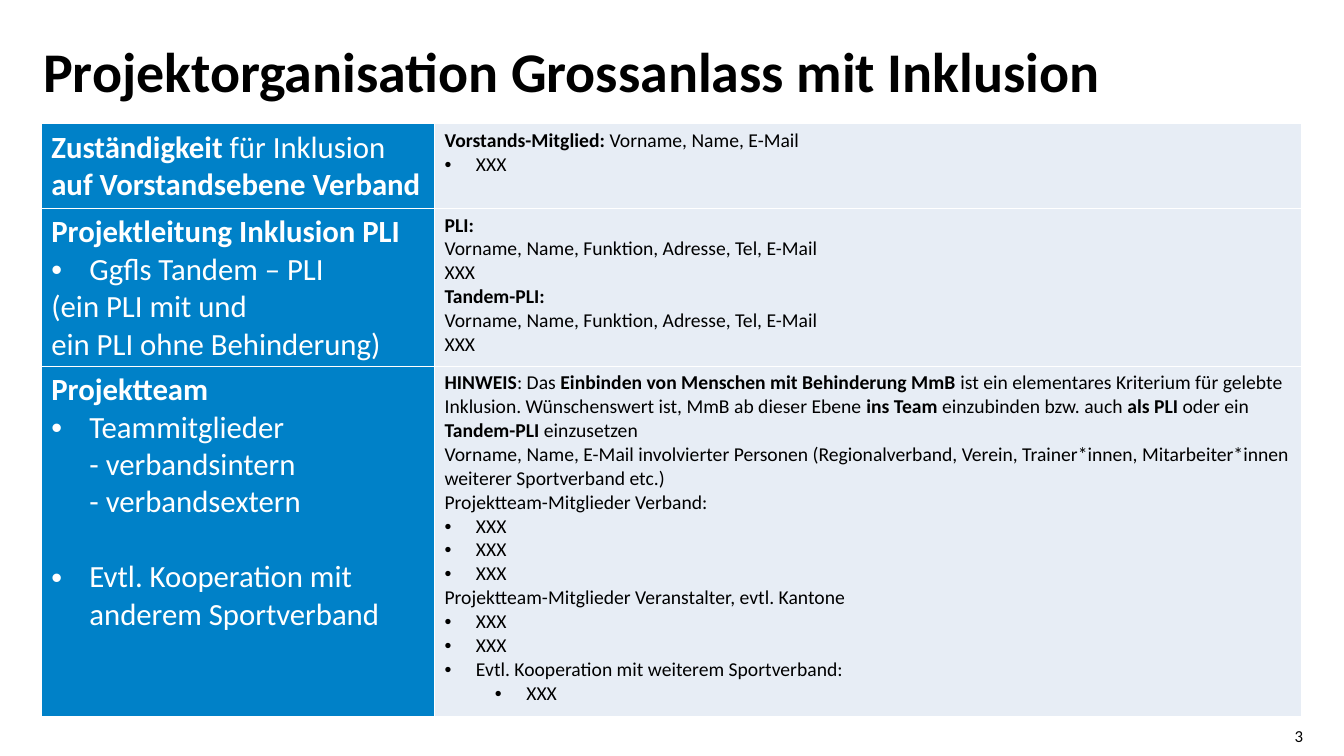
from dataclasses import dataclass

from lxml import etree
from pptx import Presentation
from pptx.dml.color import RGBColor
from pptx.enum.text import MSO_ANCHOR, PP_ALIGN
from pptx.oxml.ns import qn
from pptx.util import Cm, Pt

LEFT, RIGHT = PP_ALIGN.LEFT, PP_ALIGN.RIGHT
TOP, MIDDLE = MSO_ANCHOR.TOP, MSO_ANCHOR.MIDDLE


@dataclass(frozen=True)
class Theme:
    font: str = "Calibri"
    black: str = "000000"
    white: str = "FFFFFF"
    blue: str = "0081C8"
    pale: str = "E7EDF5"
    title: int = 40
    heading: int = 22
    body: int = 14
    number: int = 12
    border: int = 1


@dataclass(frozen=True)
class Item:
    text: str
    indent: float = 0
    hanging: float = 0
    level: int = 0
    before: float = 0


def topic(text, before=0):
    return Item(text, 0.96, 0.96, before=before)


def entry(text):
    return Item(text, 0.79, 0.79)


CONTACT = "Vorname, Name, Funktion, Adresse, Tel, E-Mail"
PLACEHOLDER = "XXX"

ROLES = [
    (
        [Item("**Zuständigkeit **für Inklusion **auf Vorstandsebene Verband**")],
        [Item("**Vorstands-Mitglied: **Vorname, Name, E-Mail"), entry(PLACEHOLDER)],
    ),
    (
        [
            Item("**Projektleitung Inklusion PLI**"),
            topic("Ggfls Tandem – PLI"),
            Item("(ein PLI mit und\nein PLI ohne Behinderung)"),
        ],
        [
            Item(text)
            for lead in ("PLI:", "Tandem-PLI:")
            for text in (f"**{lead}**", CONTACT, PLACEHOLDER)
        ],
    ),
    (
        [
            Item("**Projektteam**"),
            topic("Teammitglieder\n- verbandsintern\n- verbandsextern"),
            topic("Evtl. Kooperation mit anderem Sportverband", before=26.8),
        ],
        [
            Item(
                "**HINWEIS**: Das **Einbinden von Menschen mit Behinderung MmB **"
                "ist ein elementares Kriterium für gelebte Inklusion. "
                "Wünschenswert ist, MmB ab dieser Ebene **ins Team **"
                "einzubinden bzw. auch **als PLI **oder ein **Tandem-PLI** einzusetzen"
            ),
            Item(
                "Vorname, Name, E-Mail involvierter Personen (Regionalverband, Verein, "
                "Trainer*innen, Mitarbeiter*innen weiterer Sportverband etc.)"
            ),
            Item("Projektteam-Mitglieder Verband:"),
            *[entry(PLACEHOLDER)] * 3,
            Item("Projektteam-Mitglieder Veranstalter, evtl. Kantone"),
            *[entry(PLACEHOLDER)] * 2,
            entry("Evtl. Kooperation mit weiterem Sportverband:"),
            Item(PLACEHOLDER, 2.06, 0.79, level=1),
        ],
    ),
]


class PageBuilder:
    def __init__(self, page, theme):
        self.page = page
        self.theme = theme

    def add_items(self, frame, items, size, color, align=LEFT, spacing=None):
        for index, item in enumerate(items):
            para = frame.paragraphs[0] if index == 0 else frame.add_paragraph()
            para.level = item.level
            para.alignment = align
            if spacing:
                para.line_spacing = spacing
            if item.before:
                para.space_before = Pt(item.before)
            if item.hanging:
                self.add_bullet(para, item)
            self.add_spans(para, item.text, size, color)

    def add_bullet(self, para, item):
        properties = para._p.get_or_add_pPr()
        properties.set("marL", str(Cm(item.indent)))
        properties.set("indent", str(-Cm(item.hanging)))
        etree.SubElement(properties, qn("a:buFont"), typeface="Arial")
        etree.SubElement(properties, qn("a:buChar"), char="•")

    def add_spans(self, para, text, size, color):
        for part, content in enumerate(text.split("**")):
            for row, line in enumerate(content.split("\n")):
                if row:
                    para.add_line_break()
                if line:
                    span = para.add_run()
                    span.text = line
                    span.font.name = self.theme.font
                    span.font.size = Pt(size)
                    span.font.bold = part % 2 == 1
                    span.font.color.rgb = RGBColor.from_string(color)

    def add_text(self, text, left, top, width, height, size,
                 align=LEFT, anchor=TOP, spacing=None):
        box = self.page.shapes.add_textbox(Cm(left), Cm(top), Cm(width), Cm(height))
        frame = box.text_frame
        frame.word_wrap = True
        frame.vertical_anchor = anchor
        frame.margin_left = frame.margin_right = 0
        frame.margin_top = frame.margin_bottom = 0
        self.add_items(frame, [Item(text)], size, self.theme.black, align, spacing)

    def add_borders(self, cell):
        properties = cell._tc.get_or_add_tcPr()
        for index, side in enumerate(("lnL", "lnR", "lnT", "lnB")):
            line = etree.Element(qn(f"a:{side}"), w=str(Pt(self.theme.border)))
            fill = etree.SubElement(line, qn("a:solidFill"))
            etree.SubElement(fill, qn("a:srgbClr"), val=self.theme.white)
            properties.insert(index, line)

    def add_table(self, rows, left, top, widths, heights):
        theme = self.theme
        frame = self.page.shapes.add_table(
            len(rows), len(widths), Cm(left), Cm(top), Cm(sum(widths)), Cm(sum(heights))
        )
        table = frame.table
        table.first_row = table.horz_banding = False
        for column, width in zip(table.columns, widths):
            column.width = Cm(width)
        for row, height in zip(table.rows, heights):
            row.height = Cm(height)
        styles = [
            (theme.blue, theme.heading, theme.white),
            (theme.pale, theme.body, theme.black),
        ]
        for row, contents in zip(table.rows, rows):
            for cell, items, (fill, size, color) in zip(row.cells, contents, styles):
                cell.fill.solid()
                cell.fill.fore_color.rgb = RGBColor.from_string(fill)
                self.add_borders(cell)
                self.add_items(cell.text_frame, items, size, color)


def main():
    deck = Presentation()
    deck.slide_width, deck.slide_height = Cm(33.87), Cm(19.05)
    theme = Theme()
    builder = PageBuilder(deck.slides.add_slide(deck.slide_layouts[6]), theme)
    builder.add_text("3", 31.65, 18.29, 1.19, 0.51, theme.number, RIGHT, MIDDLE)
    builder.add_table(ROLES, 1.04, 3.12, [9.91, 21.84], [2.13, 3.84, 8.84])
    builder.add_text("**Projektorganisation Grossanlass mit Inklusion**",
                     1.09, 1.12, 27.25, 2.16, theme.title, spacing=0.9)
    deck.save("out.pptx")


if __name__ == "__main__":
    main()
